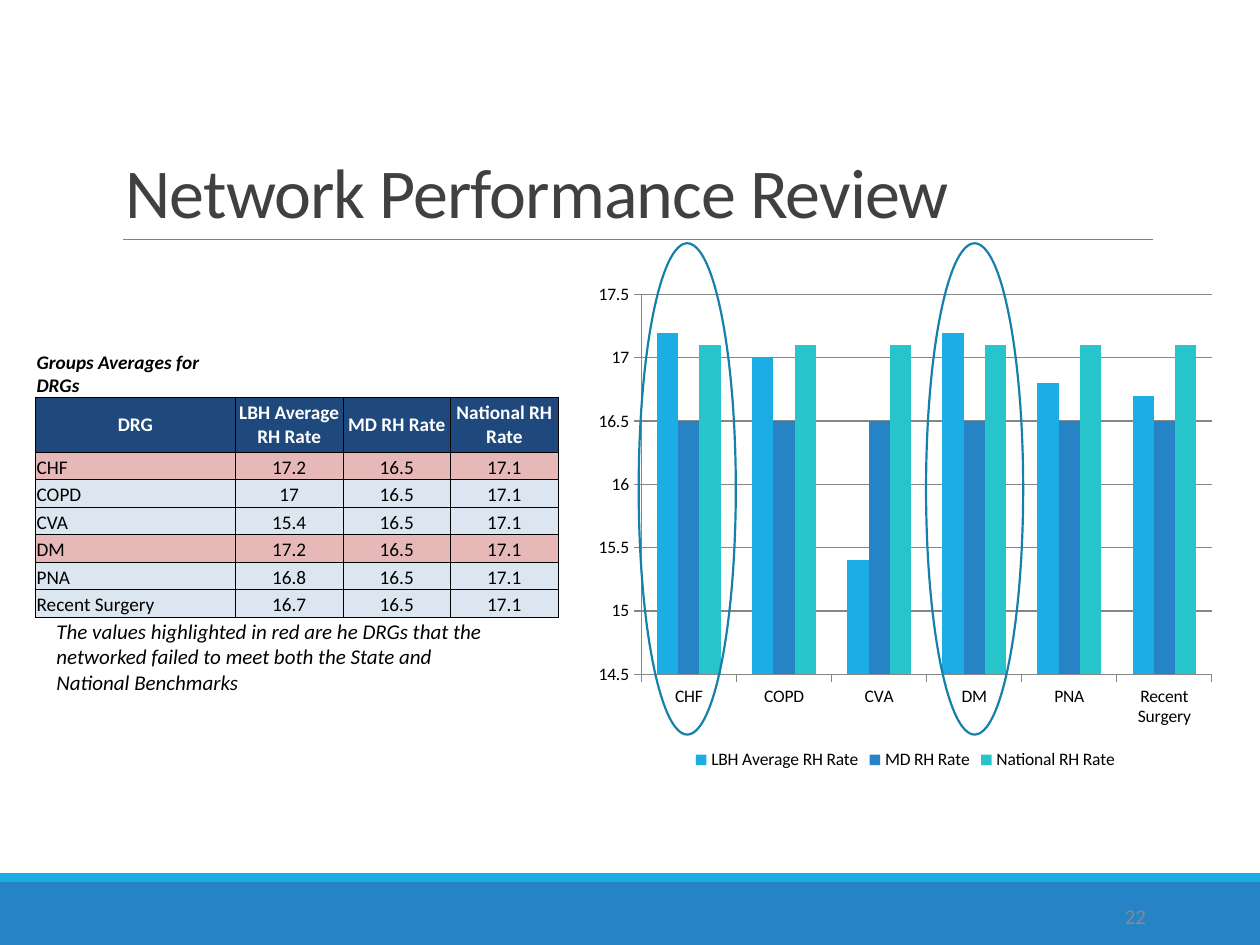
from lxml import etree
from pptx import Presentation
from pptx.chart.data import CategoryChartData
from pptx.dml.color import RGBColor
from pptx.enum.chart import XL_CHART_TYPE, XL_LEGEND_POSITION, XL_TICK_MARK
from pptx.enum.shapes import MSO_CONNECTOR, MSO_SHAPE
from pptx.enum.text import MSO_ANCHOR, PP_ALIGN
from pptx.oxml import parse_xml
from pptx.oxml.ns import nsdecls, qn
from pptx.util import Pt

RECT, OVAL = MSO_SHAPE.RECTANGLE, MSO_SHAPE.OVAL
LINE = MSO_CONNECTOR.STRAIGHT
BARS = XL_CHART_TYPE.COLUMN_CLUSTERED
BELOW = XL_LEGEND_POSITION.BOTTOM
OUT = XL_TICK_MARK.OUTSIDE
TOP, MID, LOW = MSO_ANCHOR.TOP, MSO_ANCHOR.MIDDLE, MSO_ANCHOR.BOTTOM
LEFT, MIDDLE, RIGHT = PP_ALIGN.LEFT, PP_ALIGN.CENTER, PP_ALIGN.RIGHT
FONT = "Calibri"
COLORS = {
    "blue": "2683C6", "sky": "1CADE4", "teal": "28C4CC", "ring": "1580A9",
    "title": "404040", "rule": "808080", "grid": "868686", "page": "898989",
    "black": "000000", "white": "FFFFFF",
    "head": "1F497D", "red": "E6B8B7", "pale": "DCE6F1",
}
HEADS = ["DRG", "LBH Average RH Rate", "MD RH Rate", "National RH Rate"]
RATES = [
    ("CHF", 17.2, 16.5, 17.1),
    ("COPD", 17, 16.5, 17.1),
    ("CVA", 15.4, 16.5, 17.1),
    ("DM", 17.2, 16.5, 17.1),
    ("PNA", 16.8, 16.5, 17.1),
    ("Recent Surgery", 16.7, 16.5, 17.1),
]
FAILED = ("CHF", "DM")


def rgb(name):
    return RGBColor.from_string(COLORS[name])


def style(font, size, color="black", bold=False, italic=False):
    font.name = FONT
    font.size = Pt(size)
    font.color.rgb = rgb(color)
    font.bold = bold
    font.italic = italic


def box(*dims):
    return [Pt(dim) for dim in dims]


def add_bar(slide, dims, color):
    bar = slide.shapes.add_shape(RECT, *box(*dims))
    bar.shadow.inherit = False
    bar.fill.solid()
    bar.fill.fore_color.rgb = rgb(color)
    bar.line.fill.background()


def add_ring(slide, left):
    ring = slide.shapes.add_shape(OVAL, *box(left, 139, 55.5, 280.8))
    ring.shadow.inherit = False
    ring.fill.background()
    ring.line.color.rgb = rgb("ring")
    ring.line.width = Pt(1.25)


def add_rule(slide, left, right, top):
    rule = slide.shapes.add_connector(LINE, *box(left, top, right, top))
    rule.line.color.rgb = rgb("rule")
    rule.line.width = Pt(0.5)
    etree.SubElement(rule.element.spPr, qn("a:effectLst"))


def add_text(slide, dims, text, size, color="black", anchor=TOP,
             align=LEFT, italic=False):
    frame = slide.shapes.add_textbox(*box(*dims)).text_frame
    frame.word_wrap = True
    frame.vertical_anchor = anchor
    frame.text = text
    para = frame.paragraphs[0]
    para.alignment = align
    style(para.runs[0].font, size, color, italic=italic)
    return para


def add_edges(cell, sides):
    props = cell._tc.get_or_add_tcPr()
    for spot, side in enumerate(sides):
        props.insert(spot, parse_xml(
            f'<a:ln{side} {nsdecls("a")} w="6350"><a:solidFill>'
            f'<a:srgbClr val="{COLORS["black"]}"/></a:solidFill></a:ln{side}>'))


def set_cell(cell, text, fill=None, anchor=LOW, align=LEFT, sides="LRTB", **look):
    cell.margin_left = cell.margin_right = cell.margin_top = Pt(0.72)
    cell.margin_bottom = 0
    cell.vertical_anchor = anchor
    if fill:
        cell.fill.solid()
        cell.fill.fore_color.rgb = rgb(fill)
    else:
        cell.fill.background()
    add_edges(cell, sides)
    if text:
        cell.text = text
        para = cell.text_frame.paragraphs[0]
        para.alignment = align
        style(para.runs[0].font, 11, **look)


def add_rates(slide):
    highs = [26.9, 31.5] + [15.72] * len(RATES)
    wides = [114.3] + [61.5] * 3
    table = slide.shapes.add_table(
        len(highs), len(wides),
        *box(20.2, 199.7, sum(wides), sum(highs))).table
    table.first_row = table.horz_banding = False
    for row, high in zip(table.rows, highs):
        row.height = Pt(high)
    for col, wide in zip(table.columns, wides):
        col.width = Pt(wide)
    for col, head in enumerate(HEADS):
        label = "" if col else "Groups Averages for DRGs"
        set_cell(table.cell(0, col), label, sides="B", bold=True, italic=True)
        set_cell(table.cell(1, col), head, "head", MID, MIDDLE,
                 color="white", bold=True)
    for row, rates in enumerate(RATES, 2):
        fill = "red" if rates[0] in FAILED else "pale"
        for col, value in enumerate(rates):
            set_cell(table.cell(row, col), str(value), fill,
                     align=MIDDLE if col else LEFT)


def add_graph(slide):
    names, *groups = zip(*RATES)
    data = CategoryChartData()
    data.categories = names
    for head, group in zip(HEADS[1:], groups):
        data.add_series(head, group)
    chart = slide.shapes.add_chart(
        BARS, *box(334.8, 157, 365, 285.8), data).chart
    style(chart.font, 10)
    chart.has_title = False
    chart.has_legend = True
    chart.legend.position = BELOW
    chart.legend.include_in_layout = False
    plot = chart.plots[0]
    plot.gap_width = 150
    plot.overlap = 0
    plot.vary_by_categories = False
    for series, color in zip(plot.series, ("sky", "blue", "teal")):
        series.format.fill.solid()
        series.format.fill.fore_color.rgb = rgb(color)
    scale = chart.value_axis
    scale.minimum_scale, scale.maximum_scale = 14.5, 17.5
    scale.major_unit = 0.5
    scale.has_major_gridlines = True
    for axis in (scale, chart.category_axis):
        axis.major_tick_mark = OUT
        axis.tick_labels.number_format = "General"
        axis.tick_labels.number_format_is_linked = False
    for part in (scale, chart.category_axis, scale.major_gridlines):
        part.format.line.color.rgb = rgb("grid")
        part.format.line.width = Pt(0.75)


def main():
    deck = Presentation()
    deck.slide_width, deck.slide_height = Pt(720), Pt(540)
    slide = deck.slides.add_slide(deck.slide_layouts[6])
    add_bar(slide, (0, 504, 720, 36), "blue")
    add_bar(slide, (0, 499, 720, 5), "sky")
    add_rule(slide, 70.5, 659, 136.8)
    title = add_text(slide, (64.8, 22.3, 594, 114.5),
                     "Network Performance Review", 40, "title", LOW)
    title.line_spacing = 0.85
    title.runs[0].font._element.set("spc", "-50")
    add_graph(slide)
    add_rates(slide)
    add_text(slide, (25.2, 350, 263.5, 51),
             "The values highlighted in red are he DRGs that the networked "
             "failed to meet both the State and National Benchmarks",
             12, italic=True)
    for left in (529.2, 365):
        add_ring(slide, left)
    add_text(slide, (590, 509, 72, 29), "22", 12, "page", MID, RIGHT)
    deck.save("out.pptx")


if __name__ == "__main__":
    main()
